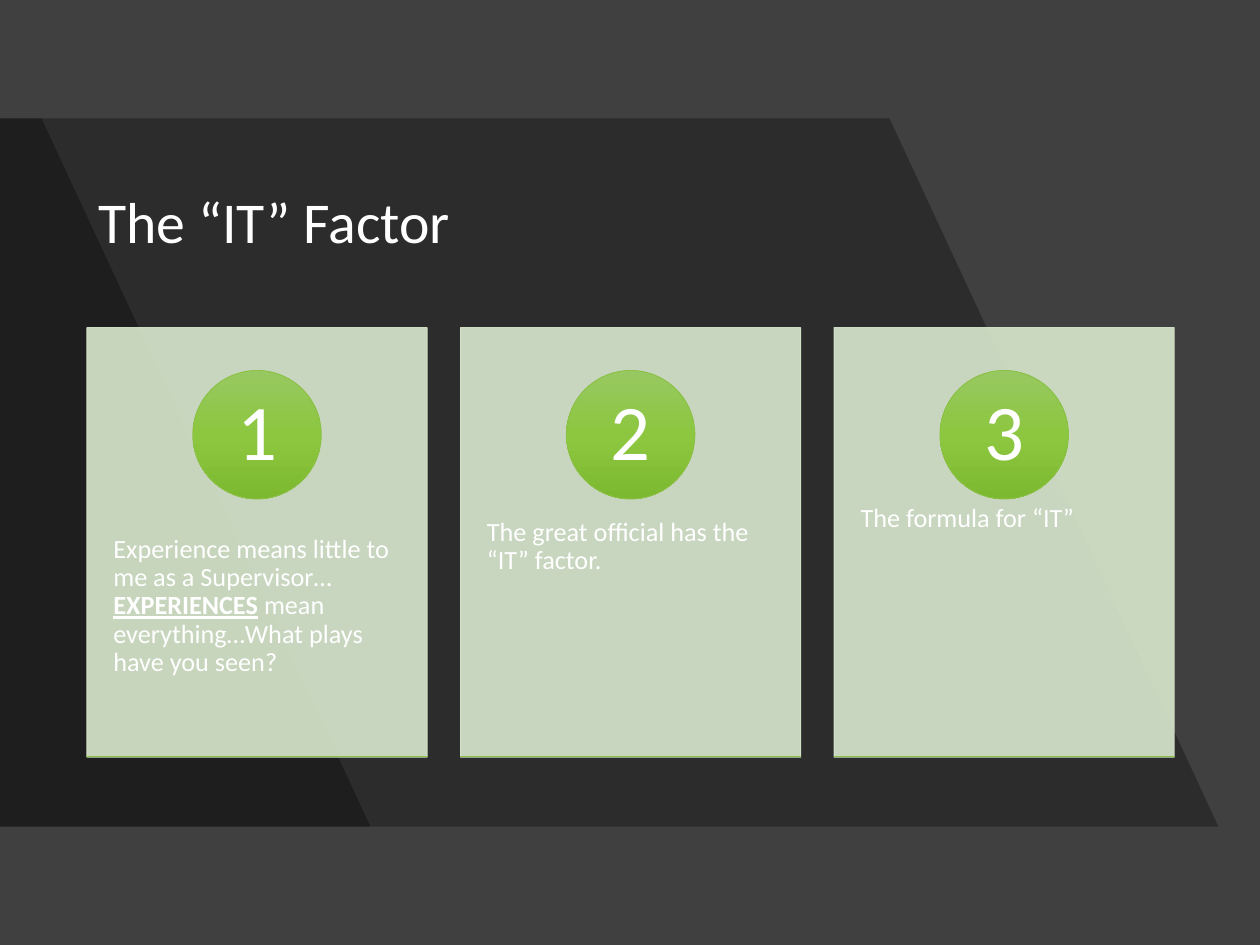
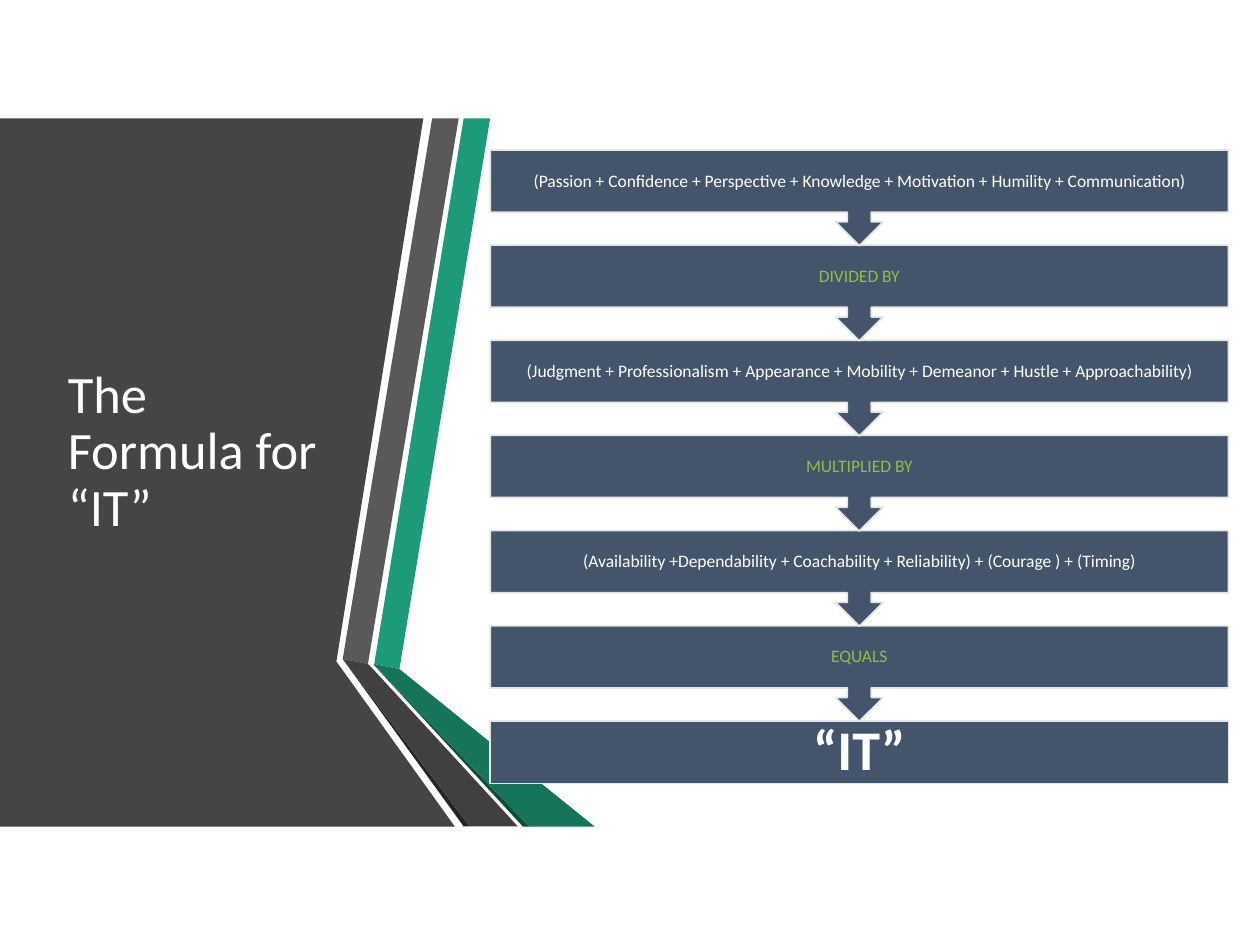
from dataclasses import dataclass
from copy import deepcopy

from lxml import etree
from pptx import Presentation
from pptx import util as u
from pptx.dml.color import RGBColor
from pptx.enum import shapes, text
from pptx.oxml.ns import qn

# Content: each card is a list of (words, emphasised) spans
FACTOR_TITLE = "The “IT” Factor"
FACTOR_CARDS = [
    [("Experience means little to me as a Supervisor…", False),
     ("EXPERIENCES", True),
     (" mean everything…What plays have you seen?", False)],
    [("The great official has the “IT” factor.", False)],
    [("The formula for “IT”", False)],
]

FORMULA_TITLE = "The Formula for “IT”"
FORMULA_TERMS = [
    "(Passion + Confidence + Perspective + Knowledge + Motivation + Humility + Communication)",
    "(Judgment + Professionalism + Appearance + Mobility + Demeanor + Hustle + Approachability)",
    "(Availability +Dependability + Coachability + Reliability) + (Courage ) + (Timing)",
]
FORMULA_OPERATORS = ["DIVIDED BY", "MULTIPLIED BY", "EQUALS"]
FORMULA_RESULT = "“IT”"

# Shared vertical extent of the background artwork
TOP, BOTTOM = 0.94, 6.56

# Slanted shades: (top right, bottom right)
SHADES = [(7.06, 9.67), (0.33, 2.94)]

# Folded ribbon: (colour, outline)
RIBBON = [
    ("454545", [(0, TOP), (3.36, TOP), (2.67, 5.25), (3.61, BOTTOM), (0, BOTTOM)]),
    ("1D9A78", [(2.97, 5.27), (3.17, 5.31), (3.89, TOP), (3.68, TOP)]),
    ("595959", [(3.64, TOP), (3.43, TOP), (2.72, 5.23), (2.92, 5.27)]),
    ("262626", [(2.72, 5.23), (3.68, BOTTOM), (3.73, BOTTOM)]),
    ("0E4D3C", [(2.97, 5.28), (4.15, BOTTOM), (4.2, BOTTOM)]),
    ("16745A", [(2.97, 5.28), (4.2, BOTTOM), (4.72, BOTTOM), (3.17, 5.31), (2.97, 5.27)]),
    ("404040", [(4.11, BOTTOM), (2.96, 5.31), (2.92, 5.27), (2.72, 5.23), (3.73, BOTTOM)]),
]


@dataclass(frozen=True)
class Theme:
    font: str = "Calibri"
    white: str = "FFFFFF"
    dark: str = "404040"
    shade: str = "000000"
    card: str = "DAE9CF"
    green: str = "8BC145"
    green_blend: tuple = ("98C862", "8CC73F", "7DB831")
    step: str = "44546A"
    step_line: str = "E7E6E6"
    wide_title: int = 33
    side_title: int = 30
    number: int = 45
    body: int = 15
    term: int = 10
    result: int = 32


THEME = Theme()


def rgb(color):
    return RGBColor.from_string(color)


def inches(*values):
    return [u.Inches(value) for value in values]


def new_slide(deck, background):
    slide = deck.slides.add_slide(deck.slide_layouts[6])
    slide.background.fill.solid()
    slide.background.fill.fore_color.rgb = rgb(background)
    return slide


def set_opacity(shape, percent):
    for color in shape._element.spPr.iter(qn("a:srgbClr")):
        etree.SubElement(color, qn("a:alpha"), val=str(percent * 1000))


def fill_green(shape):
    shape.fill.gradient()
    shape.fill.gradient_angle = 270
    stop_list = shape._element.spPr.find(".//" + qn("a:gsLst"))
    stop_list.append(deepcopy(stop_list[0]))
    for index, (stop, color) in enumerate(zip(shape.fill.gradient_stops, THEME.green_blend)):
        stop.position = index / 2
        stop.color.rgb = rgb(color)


def add_polygon(slide, points, color):
    start, *others = [inches(*point) for point in points]
    builder = slide.shapes.build_freeform(*start)
    builder.add_line_segments(others, close=True)
    shape = builder.convert_to_shape()
    shape.shadow.inherit = False
    shape.fill.solid()
    shape.fill.fore_color.rgb = rgb(color)
    shape.line.fill.background()
    return shape


def add_preset(slide, preset, place, line, line_width, fill=None):
    """Add a preset shape; without a fill colour it takes the green blend."""
    shape = slide.shapes.add_shape(preset, *inches(*place))
    shape.shadow.inherit = False
    if fill:
        shape.fill.solid()
        shape.fill.fore_color.rgb = rgb(fill)
    else:
        fill_green(shape)
    shape.line.color.rgb = rgb(line)
    shape.line.width = u.Pt(line_width)
    return shape


def add_text(slide, place, spans, size, color=THEME.white, bold=False, centred=False,
             anchor=text.MSO_ANCHOR.MIDDLE, insets=(0.1, 0.05)):
    frame = slide.shapes.add_textbox(*inches(*place)).text_frame
    frame.word_wrap = True
    frame.vertical_anchor = anchor
    frame.margin_left = frame.margin_right = u.Inches(insets[0])
    frame.margin_top = frame.margin_bottom = u.Inches(insets[1])
    para = frame.paragraphs[0]
    para.alignment = text.PP_ALIGN.CENTER if centred else text.PP_ALIGN.LEFT
    para.line_spacing = 0.9
    para.font.name = THEME.font
    para.font.size = u.Pt(size)
    para.font.bold = bold
    para.font.color.rgb = rgb(color)
    for words, emphasised in spans:
        span = para.add_run()
        span.text = words
        if emphasised:
            span.font.bold = span.font.underline = True


def add_title(slide, place, words, size):
    add_text(slide, place, [(words, False)], size)


def build_factor_slide(deck):
    slide = new_slide(deck, THEME.dark)
    for top_right, bottom_right in SHADES:
        outline = [(0, TOP), (top_right, TOP), (bottom_right, BOTTOM), (0, BOTTOM)]
        set_opacity(add_polygon(slide, outline, THEME.shade), 30)
    add_title(slide, (0.68, 1.24, 8.63, 1.09), FACTOR_TITLE, THEME.wide_title)

    # Equal cards spread between the left and right edges
    left_edge, right_edge, top, width, height = 0.69, 9.32, 2.6, 2.7, 3.41
    disc, number_box = 1.02, 0.72
    pitch = (right_edge - left_edge - width) / (len(FACTOR_CARDS) - 1)
    rect, oval = shapes.MSO_SHAPE.RECTANGLE, shapes.MSO_SHAPE.OVAL
    for index, spans in enumerate(FACTOR_CARDS):
        left = left_edge + index * pitch
        middle = left + width / 2
        card = add_preset(slide, rect, (left, top, width, height), THEME.card, 0.5, THEME.card)
        set_opacity(card, 90)
        add_text(slide, (left, 3.89, width, 2.04), spans, THEME.body,
                 anchor=text.MSO_ANCHOR.TOP, insets=(0.21, 0.36))
        add_preset(slide, oval, (middle - disc / 2, 2.94, disc, disc), THEME.green, 0.5)
        add_text(slide, (middle - number_box / 2, 3.09, number_box, number_box),
                 [(str(index + 1), False)], THEME.number, centred=True, insets=(0.08, 0.01))
        # Thin green base line
        add_preset(slide, rect, (left, 6, width, 0), THEME.green, 0.5)


def build_formula_slide(deck):
    slide = new_slide(deck, THEME.white)
    for color, outline in RIBBON:
        add_polygon(slide, outline, color)
    add_title(slide, (0.44, 1.5, 2.28, 4.19), FORMULA_TITLE, THEME.side_title)

    # Terms and operators alternate, ending in the result
    steps = []
    for term, operator in zip(FORMULA_TERMS, FORMULA_OPERATORS):
        steps += [(term, THEME.white), (operator, THEME.green)]
    steps.append((FORMULA_RESULT, THEME.white))

    left, first_top, last_top, width = 3.89, 1.19, 5.72, 5.86
    body_height, callout_height = 0.5, 0.76
    pitch = (last_top - first_top) / (len(steps) - 1)
    # Bottom step first, so each arrow tip lies over the step below
    for index, (words, color) in reversed(list(enumerate(steps))):
        top = first_top + index * pitch
        is_result = index == len(steps) - 1
        preset = shapes.MSO_SHAPE.RECTANGLE if is_result else shapes.MSO_SHAPE.UP_ARROW_CALLOUT
        height = body_height if is_result else callout_height
        step = add_preset(slide, preset, (left, top, width, height),
                          THEME.step_line, 1, THEME.step)
        step.rotation = 0 if is_result else 180
        add_text(slide, (left, top, width, body_height), [(words, False)],
                 THEME.result if is_result else THEME.term, color,
                 bold=is_result, centred=True, insets=(0.08, 0.08))


def main():
    deck = Presentation()
    deck.slide_width, deck.slide_height = inches(10, 7.5)
    build_factor_slide(deck)
    build_formula_slide(deck)
    deck.save("out.pptx")


if __name__ == "__main__":
    main()
